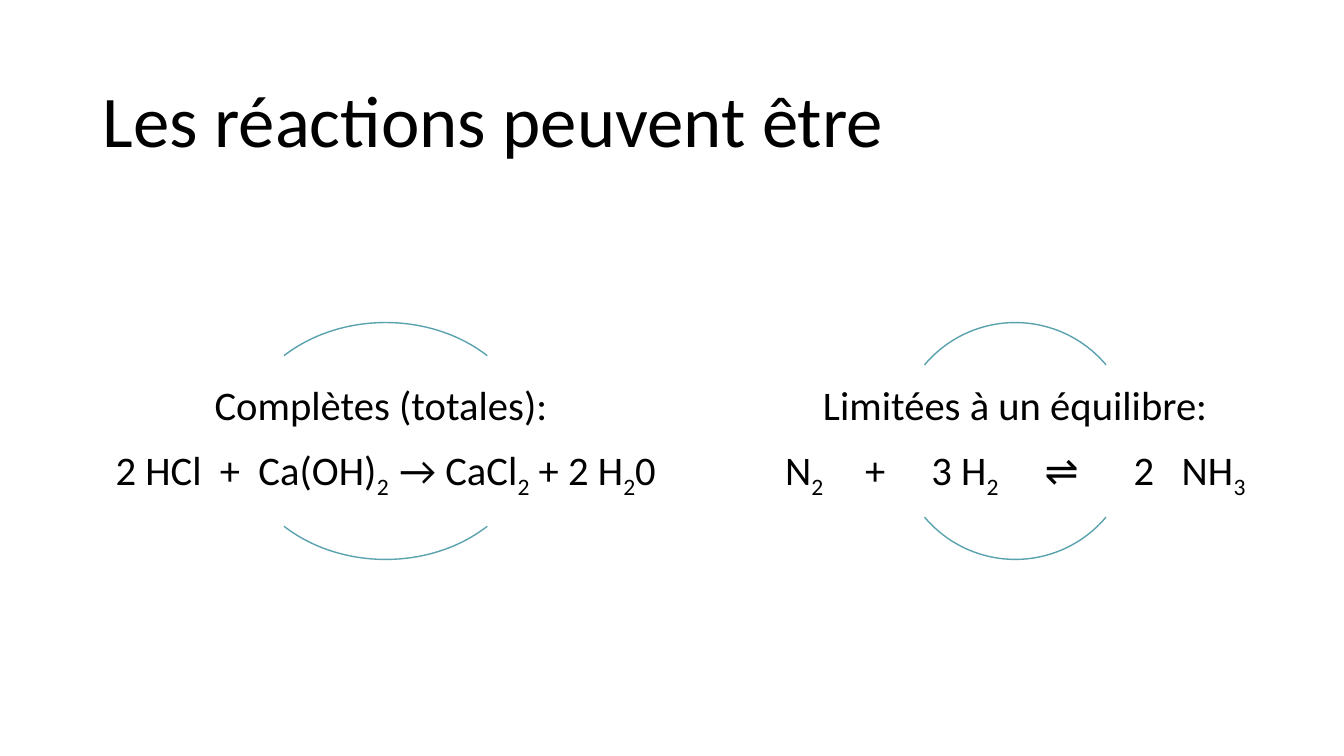
from dataclasses import dataclass

from pptx import Presentation
from pptx.dml.color import RGBColor
from pptx.enum.shapes import MSO_SHAPE as Preset
from pptx.enum.text import MSO_ANCHOR as Anchor, MSO_AUTO_SIZE as AutoSize, PP_ALIGN as Align
from pptx.util import Inches, Pt

COLOURS = {"text": "000000", "arc": "5AA2AE"}
FONT = "Calibri"
ARC_TOP, ARC_HEIGHT = 3.2, 2.35
LABEL_TOP, LABEL_HEIGHT = 3.62, 1.5
ARC_ANGLES = [(132, 192), (24, 84)]


@dataclass
class Reaction:
    left: float
    width: float
    heading: str
    equation: str


REACTIONS = [
    Reaction(0.92, 5.81, "Complètes (totales): ",
             "2 HCl  +  Ca(OH)_2  _→ CaCl_2_ + 2 H_2_0"),
    Reaction(7.72, 4.7, "Limitées à un équilibre:",
             "N_2 _    +     3 H_2_     ⇌      2   NH_3"),
]


def write_text(frame, lines: list[str], *, size: float, align=Align.LEFT,
               space_after: float = 0, inset: float | None = None) -> None:
    frame.word_wrap = True
    frame.auto_size = AutoSize.NONE
    frame.vertical_anchor = Anchor.MIDDLE
    if inset is not None:
        frame.margin_left = frame.margin_right = Inches(inset)
        frame.margin_top = frame.margin_bottom = Inches(inset)
    for index, line in enumerate(lines):
        paragraph = frame.add_paragraph() if index else frame.paragraphs[0]
        paragraph.alignment = align
        paragraph.line_spacing = 0.9
        paragraph.space_before = Pt(0)
        paragraph.space_after = Pt(space_after)
        for position, part in enumerate(line.split("_")):
            run = paragraph.add_run()
            run.text = part
            run.font.name = FONT
            run.font.size = Pt(size)
            run.font.color.rgb = RGBColor.from_string(COLOURS["text"])
            if position % 2:
                run._r.get_or_add_rPr().set("baseline", "-25000")


def add_arc(slide, reaction: Reaction, angles: tuple[int, int]) -> None:
    width = reaction.width / 2
    arc = slide.shapes.add_shape(
        Preset.ARC, Inches(reaction.left + width / 2), Inches(ARC_TOP),
        Inches(width), Inches(ARC_HEIGHT))
    arc.adjustments[0], arc.adjustments[1] = angles
    arc.shadow.inherit = False
    arc.fill.background()
    arc.line.color.rgb = RGBColor.from_string(COLOURS["arc"])
    arc.line.width = Pt(1)


def add_reaction(slide, reaction: Reaction) -> None:
    for angles in ARC_ANGLES:
        add_arc(slide, reaction, angles)
    label = slide.shapes.add_textbox(
        Inches(reaction.left), Inches(LABEL_TOP),
        Inches(reaction.width), Inches(LABEL_HEIGHT))
    write_text(label.text_frame, [reaction.heading, reaction.equation],
               size=29, align=Align.CENTER, space_after=12, inset=0.02)


def main() -> None:
    presentation = Presentation()
    presentation.slide_width, presentation.slide_height = Inches(13.33), Inches(7.5)
    slide = presentation.slides.add_slide(presentation.slide_layouts.get_by_name("Title Only"))
    title = slide.shapes.title
    title.left, title.top = Inches(0.92), Inches(0.61)
    title.width, title.height = Inches(11.5), Inches(1.24)
    write_text(title.text_frame, ["Les réactions peuvent être"], size=52)
    for reaction in REACTIONS:
        add_reaction(slide, reaction)
    presentation.save("out.pptx")


if __name__ == "__main__":
    main()
